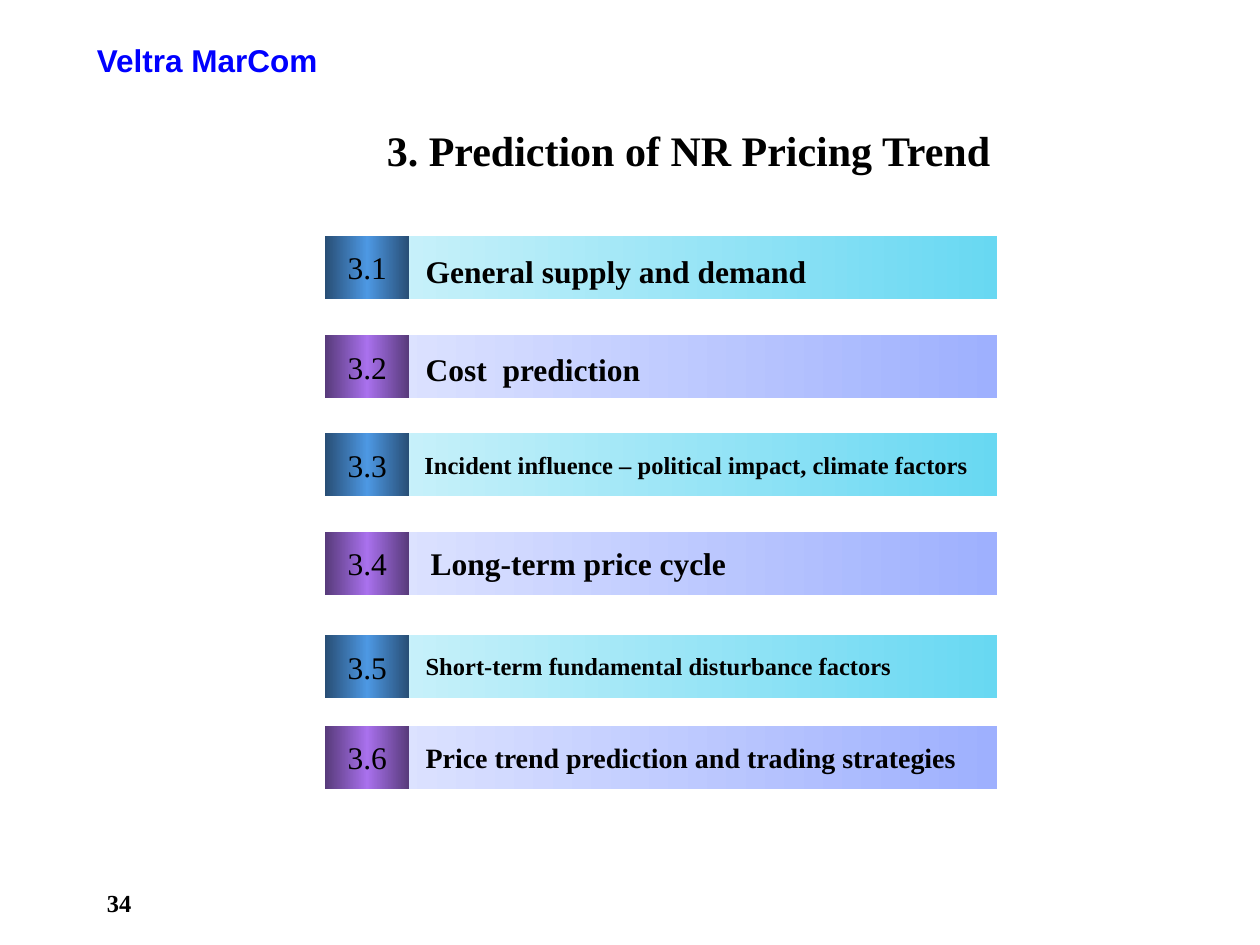
from pptx import Presentation
from pptx.dml.color import RGBColor
from pptx.enum.shapes import MSO_SHAPE
from pptx.enum.text import MSO_ANCHOR, PP_ALIGN
from pptx.oxml import parse_xml
from pptx.oxml.ns import nsdecls, qn
from pptx.util import Inches, Pt

RECT = MSO_SHAPE.RECTANGLE
TOP, MIDDLE = MSO_ANCHOR.TOP, MSO_ANCHOR.MIDDLE
LEFT, CENTER = PP_ALIGN.LEFT, PP_ALIGN.CENTER
SERIF, SANS = "Times New Roman", "Arial"

COLORS = {
    "text": "000000",
    "header": "0000FF",
    "cyan_light": "C8F1FA",
    "cyan": "68D8F2",
    "navy": "284E75",
    "blue": "4D98E3",
    "lilac_light": "DCE2FF",
    "lilac": "9EB0FE",
    "plum": "573A7A",
    "violet": "A971ED",
}
THEMES = [
    {"bar": ["cyan_light", "cyan"], "badge": ["navy", "blue", "navy"]},
    {"bar": ["lilac_light", "lilac"], "badge": ["plum", "violet", "plum"]},
]
AGENDA_LEFT, AGENDA_WIDTH = 2.58, 5.33
ROW_HEIGHT, BADGE_WIDTH, BAR_OFFSET = 0.5, 0.67, 0.58
# Each row: top, text, size, label left, label top, label height
ROWS = [
    (1.87, "General supply and demand", 18, 3.28, 1.95, 0.4),
    (2.66, "Cost  prediction", 18, 3.28, 2.73, 0.4),
    (3.44, "Incident influence – political impact, climate factors", 14, 3.27, 3.52, 0.34),
    (4.22, "Long-term price cycle", 18, 3.32, 4.27, 0.4),
    (5.04, "Short-term fundamental disturbance factors", 14, 3.28, 5.12, 0.34),
    (5.76, "Price trend prediction and trading strategies", 16, 3.28, 5.83, 0.37),
]


def write(sp, text, size, font=SERIF, color="text", bold=True,
          align=LEFT, anchor=TOP, wrap=True):
    """Put one formatted paragraph into a shape and return the paragraph."""
    tf = sp.text_frame
    tf.word_wrap = wrap
    tf.vertical_anchor = anchor
    p = tf.paragraphs[0]
    p.text = text
    p.alignment = align
    p.font.name = font
    p.font.size = Pt(size)
    p.font.bold = bold
    p.font.color.rgb = RGBColor.from_string(COLORS[color])
    return p


def add_text(s, box, text, size, **style):
    """Add a text box at the given left, top, width and height."""
    tb = s.shapes.add_textbox(*map(Inches, box))
    return write(tb, text, size, **style)


def add_gradient_rect(group, box, names):
    """Add a borderless rectangle with evenly spaced horizontal colour stops."""
    sp = group.shapes.add_shape(RECT, *map(Inches, box))
    sp.shadow.inherit = False
    sp.line.fill.background()
    sp.fill.gradient()
    sp.fill.gradient_angle = 0
    stops = "".join(
        f'<a:gs pos="{i * 100000 // (len(names) - 1)}">'
        f'<a:srgbClr val="{COLORS[name]}"/></a:gs>'
        for i, name in enumerate(names))
    grad = sp._element.spPr.find(qn("a:gradFill"))
    grad.replace(grad.find(qn("a:gsLst")),
                 parse_xml(f'<a:gsLst {nsdecls("a")}>{stops}</a:gsLst>'))
    return sp


def add_row(s, box, number, theme):
    """Add a grouped agenda bar with its number badge."""
    left, top, width, height = box
    group = s.shapes.add_group_shape()
    add_gradient_rect(group, (left + BAR_OFFSET, top, width - BAR_OFFSET, height),
                      theme["bar"])
    badge = add_gradient_rect(group, (left, top, BADGE_WIDTH, height), theme["badge"])
    write(badge, number, 18, bold=False, align=CENTER, anchor=MIDDLE, wrap=False)


def add_agenda(s, left, width):
    """Add all agenda rows with alternating colour themes."""
    for i, (top, text, size, label_left, label_top, label_height) in enumerate(ROWS):
        add_row(s, (left, top, width, ROW_HEIGHT), f"3.{i + 1}", THEMES[i % 2])
        add_text(s, (label_left, label_top, 4.53, label_height), text, size)


def add_title(s, box, text):
    """Place and format the title placeholder."""
    title = s.shapes.title
    title.left, title.top, title.width, title.height = map(Inches, box)
    write(title, text, 24, wrap=False)


def main():
    """Build the section agenda slide."""
    prs = Presentation()
    prs.slide_width, prs.slide_height = Inches(10), Inches(7.5)
    s = prs.slides.add_slide(prs.slide_layouts[5])
    header = add_text(s, (0.67, 0.33, 4.58, 0.34), "Veltra MarCom", 18,
                      font=SANS, color="header", anchor=MIDDLE)
    header.line_spacing = 0.8
    add_title(s, (2.97, 0.94, 5.04, 0.5), "3. Prediction of NR Pricing Trend")
    add_agenda(s, AGENDA_LEFT, AGENDA_WIDTH)
    add_text(s, (0.75, 7, 2.08, 0.33), "34", 14)
    prs.save("out.pptx")


if __name__ == "__main__":
    main()
